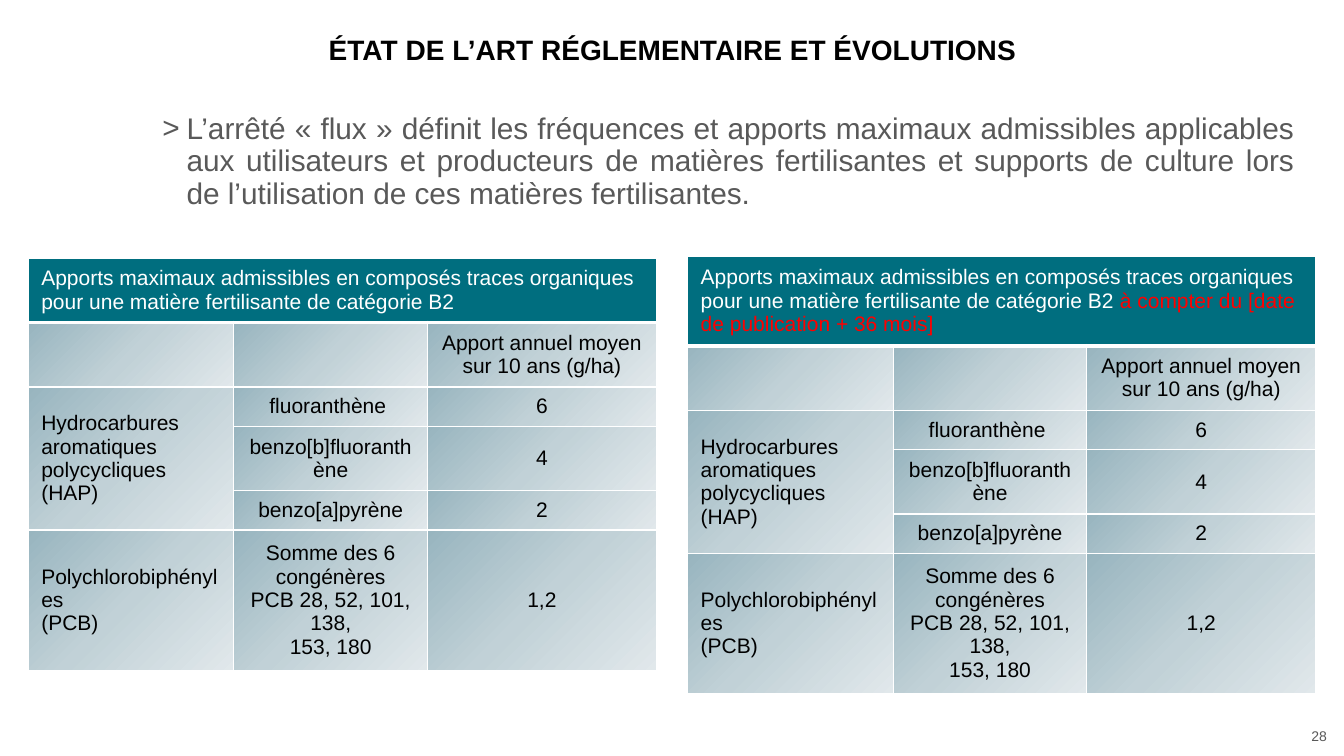
from lxml import etree
from pptx import Presentation, util as u
from pptx.dml.color import RGBColor
from pptx.enum import text
from pptx.oxml import parse_xml
from pptx.oxml.ns import nsdecls, qn

WIDTH, HEIGHT = u.Inches(13.33), u.Inches(7.5)
FONT = "Arial"
COLORS = {
    "black": "000000", "white": "FFFFFF", "grey": "595959", "red": "FF0000",
    "teal": "006E7F", "dark": "98B5BF", "middle": "C1D1D7", "light": "E1E8EB",
}
COLUMN_WEIGHTS = (2.04, 1.92, 2.27)
BODY_ROW_WEIGHTS = (0.62, 0.38, 0.62, 0.38, 1.36)
HEADING = ("Apports maximaux admissibles en composés traces organiques "
           "pour une matière fertilisante de catégorie B2")
BODY_ROWS = (
    ("", "", "Apport annuel moyen sur 10 ans (g/ha)"),
    ("Hydrocarbures\naromatiques\npolycycliques (HAP)", "fluoranthène ", "6"),
    ("", "benzo[b]fluoranthène", "4"),
    ("", "benzo[a]pyrène", "2"),
    ("Polychlorobiphényles\n(PCB)",
     "Somme des 6 congénères\nPCB 28, 52, 101, 138,\n153, 180", "1,2"),
)


def place(box):
    """Turn left, top, width and height in percent of the slide into lengths."""
    return [int(side * share / 100) for side, share in zip((WIDTH, HEIGHT) * 2, box)]


def style(paragraph, size, color, alignment, bold=False):
    """Set the font and alignment of a paragraph."""
    paragraph.alignment = alignment
    font = paragraph.font
    font.name, font.size, font.bold = FONT, u.Pt(size), bold
    font.color.rgb = RGBColor.from_string(COLORS[color])


def add_text(slide, box, wording, anchor=text.MSO_ANCHOR.MIDDLE):
    """Add a wrapped text box and return its paragraph."""
    frame = slide.shapes.add_textbox(*place(box)).text_frame
    frame.word_wrap = True
    frame.vertical_anchor = anchor
    frame.margin_left = frame.margin_right = u.Inches(0.04)
    frame.margin_top = frame.margin_bottom = u.Inches(0.04)
    frame.text = wording
    return frame.paragraphs[0]


def add_title(slide, box, wording):
    """Add the centred slide title."""
    paragraph = add_text(slide, box, wording)
    paragraph.line_spacing = 0.9
    style(paragraph, 20, "black", text.PP_ALIGN.CENTER, bold=True)


def add_statement(slide, box, wording):
    """Add the justified statement with its hanging bullet."""
    paragraph = add_text(slide, box, wording, text.MSO_ANCHOR.TOP)
    paragraph.line_spacing = 0.9
    properties = paragraph._p.get_or_add_pPr()
    properties.set("marL", str(u.Inches(0.93)))
    properties.set("indent", str(u.Inches(-0.24)))
    etree.SubElement(properties, qn("a:buFont"), typeface=FONT)
    etree.SubElement(properties, qn("a:buChar"), char=">")
    style(paragraph, 21.3, "grey", text.PP_ALIGN.JUSTIFY)


def add_page_number(slide, box, number):
    """Add the page number at the right."""
    style(add_text(slide, box, number), 10, "grey", text.PP_ALIGN.RIGHT)


def set_borders(cell, top=1, bottom=1):
    """Draw white borders, with widths in points."""
    properties = cell._tc.get_or_add_tcPr()
    for side, width in zip("LRTB", (1, 1, top, bottom)):
        properties.append(parse_xml(
            f'<a:ln{side} {nsdecls("a")} w="{u.Pt(width)}"><a:solidFill>'
            f'<a:srgbClr val="{COLORS["white"]}"/></a:solidFill></a:ln{side}>'))


def fill_gradient(cell):
    """Shade a cell diagonally from dark to light."""
    stops = "".join(
        f'<a:gs pos="{position}"><a:srgbClr val="{COLORS[name]}"/></a:gs>'
        for position, name in ((0, "dark"), (50000, "middle"), (100000, "light")))
    cell._tc.get_or_add_tcPr().append(parse_xml(
        f'<a:gradFill {nsdecls("a")} rotWithShape="1"><a:gsLst>{stops}</a:gsLst>'
        '<a:lin ang="2700000" scaled="0"/></a:gradFill>'))


def fill_cell(cell, wording, row, column):
    """Write and format one table cell."""
    heading = row == 0
    cell.vertical_anchor = text.MSO_ANCHOR.MIDDLE
    cell.margin_left = cell.margin_right = u.Inches(0.13)
    cell.margin_top = cell.margin_bottom = u.Inches(0 if cell.is_spanned else 0.07)
    cell.text = wording
    centred = not heading and column > 0
    for paragraph in cell.text_frame.paragraphs:
        style(paragraph, 15, "white" if heading else "black",
              text.PP_ALIGN.CENTER if centred else text.PP_ALIGN.LEFT)
    set_borders(cell, top=3 if row == 1 else 1, bottom=3 if heading else 1)
    if heading:
        cell.fill.solid()
        cell.fill.fore_color.rgb = RGBColor.from_string(COLORS["teal"])
    else:
        fill_gradient(cell)


def add_limits_table(slide, box, heading_weight, addition=""):
    """Add a table of maximum inputs, with an optional red end to its heading."""
    left, top, width, height = place(box)
    rows = ((HEADING, "", ""),) + BODY_ROWS
    weights = (heading_weight,) + BODY_ROW_WEIGHTS
    table = slide.shapes.add_table(
        len(rows), len(COLUMN_WEIGHTS), left, top, width, height).table
    table.first_row = table.horz_banding = False
    for column, weight in zip(table.columns, COLUMN_WEIGHTS):
        column.width = int(width * weight / sum(COLUMN_WEIGHTS))
    for row, weight in zip(table.rows, weights):
        row.height = int(height * weight / sum(weights))
    table.cell(0, 0).merge(table.cell(0, 2))
    table.cell(2, 0).merge(table.cell(4, 0))
    for row, wordings in enumerate(rows):
        for column, wording in enumerate(wordings):
            fill_cell(table.cell(row, column), wording, row, column)
    if addition:
        run = table.cell(0, 0).text_frame.paragraphs[0].add_run()
        run.text = " " + addition
        run.font.color.rgb = RGBColor.from_string(COLORS["red"])


def main():
    """Build and save the slide."""
    presentation = Presentation()
    presentation.slide_width, presentation.slide_height = WIDTH, HEIGHT
    slide = presentation.slides.add_slide(presentation.slide_layouts[6])
    add_title(slide, (15.15, 0.8, 69.77, 12.13),
              "ÉTAT DE L’ART RÉGLEMENTAIRE ET ÉVOLUTIONS")
    add_statement(
        slide, (6.6, 14.53, 90.02, 22.4),
        "L’arrêté « flux » définit les fréquences et apports maximaux admissibles "
        "applicables aux utilisateurs et producteurs de matières fertilisantes et "
        "supports de culture lors de l’utilisation de ces matières fertilisantes.")
    add_page_number(slide, (87.85, 95.87, 11.18, 2.93), "28")
    add_limits_table(slide, (2.1, 34.13, 46.74, 53.07), 0.62)
    add_limits_table(slide, (51.16, 33.87, 46.74, 56.4), 0.87,
                     "à compter du [date de publication + 36 mois]")
    presentation.save("out.pptx")


if __name__ == "__main__":
    main()
